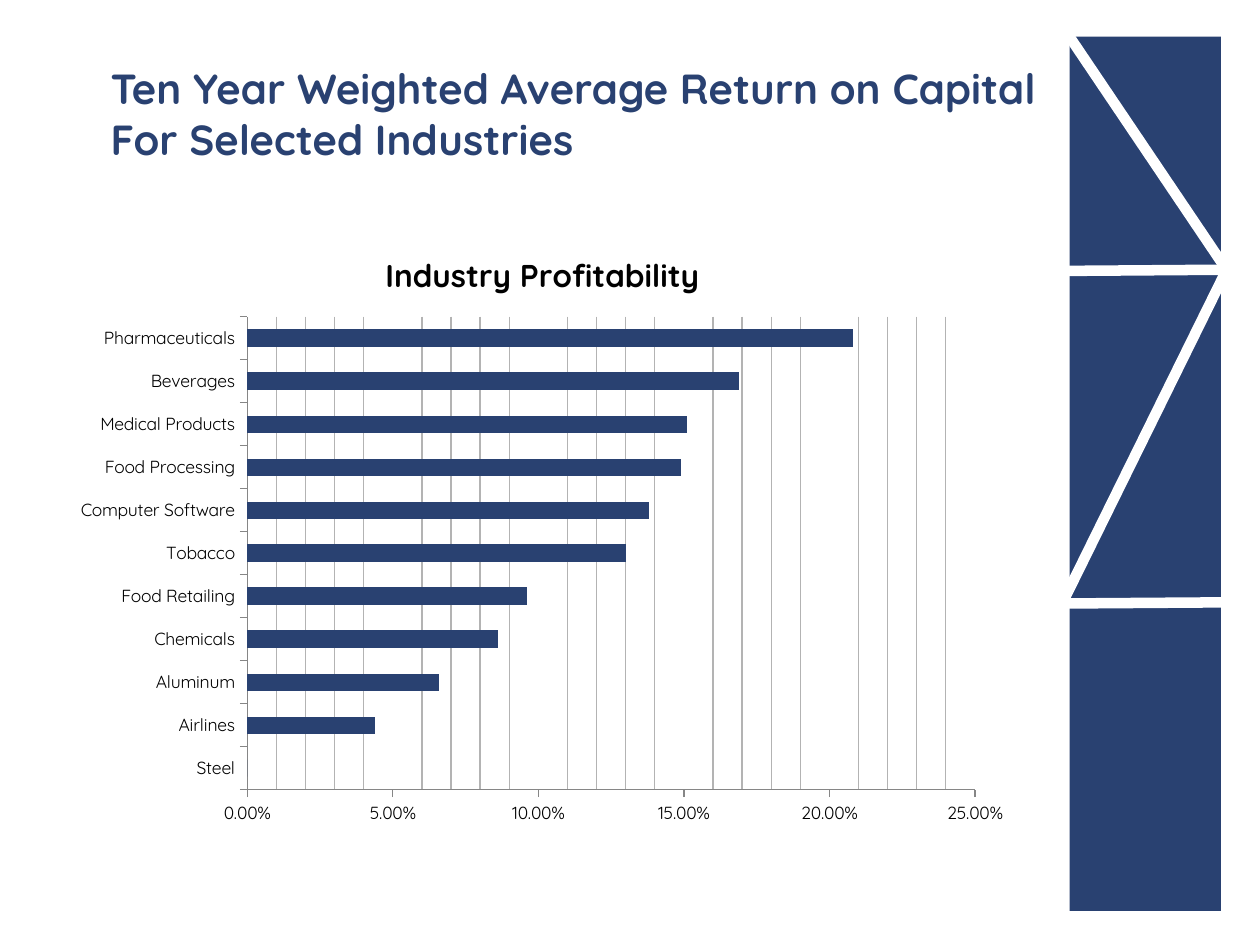
from dataclasses import dataclass

from lxml import etree
from pptx import Presentation
from pptx.chart.data import CategoryChartData
from pptx.dml.color import RGBColor
from pptx.enum.chart import XL_CHART_TYPE as ChartType, XL_TICK_MARK as Tick
from pptx.enum.shapes import MSO_CONNECTOR as Connector, MSO_SHAPE as Shape
from pptx.enum.text import MSO_AUTO_SIZE as AutoSize
from pptx.oxml.ns import qn
from pptx.util import Inches, Pt


@dataclass(frozen=True)
class Theme:
    font: str = "Quicksand"
    navy: RGBColor = RGBColor(0x29, 0x41, 0x71)
    white: RGBColor = RGBColor(0xFF, 0xFF, 0xFF)
    black: RGBColor = RGBColor(0, 0, 0)
    axis: RGBColor = RGBColor(0x86, 0x86, 0x86)
    grid: RGBColor = RGBColor(0xB3, 0xB3, 0xB3)
    heading: Pt = Pt(24)
    chart_title: Pt = Pt(18)
    label: Pt = Pt(10)
    stripe: Pt = Pt(6)
    hairline: Pt = Pt(0.75)


THEME = Theme()

RETURNS = {
    "Steel": 0, "Airlines": 0.044, "Aluminum": 0.066, "Chemicals": 0.086,
    "Food Retailing": 0.096, "Tobacco": 0.13, "Computer Software": 0.138,
    "Food Processing": 0.149, "Medical Products": 0.151,
    "Beverages": 0.169, "Pharmaceuticals": 0.208,
}

# Start and end of each white stripe across the side panel
STRIPES = [
    ((8.42, 4.79), (9.79, 4.78)),
    ((8.43, 4.79), (9.8, 2.01)),
    ((8.42, 0.19), (9.97, 2.49)),
    ((8.46, 2.15), (9.83, 2.14)),
]


def style_font(font, size, color, bold=False):
    font.name = THEME.font
    font.size = size
    font.bold = bold
    font.color.rgb = color


def add_panel(slide, x, y, w, h):
    sp = slide.shapes.add_shape(Shape.RECTANGLE, Inches(x), Inches(y), Inches(w), Inches(h))
    sp.shadow.inherit = False
    sp.fill.solid()
    sp.fill.fore_color.rgb = THEME.navy
    sp.line.fill.background()


def add_stripe(slide, start, end):
    points = [Inches(v) for v in (*start, *end)]
    line = slide.shapes.add_connector(Connector.STRAIGHT, *points)
    line.line.color.rgb = THEME.white
    line.line.width = THEME.stripe
    etree.SubElement(line._element.spPr, qn("a:effectLst"))


def add_heading(slide, text, x, y, w, h):
    box = slide.shapes.add_textbox(Inches(x), Inches(y), Inches(w), Inches(h))
    tf = box.text_frame
    tf.word_wrap = True
    tf.auto_size = AutoSize.SHAPE_TO_FIT_TEXT
    r = tf.paragraphs[0].add_run()
    r.text = text
    style_font(r.font, THEME.heading, THEME.navy, bold=True)


def set_plot_layout(chart, **fractions):
    """Fix the inner plot area, given as fractions of the chart frame."""
    plot_area = chart._chartSpace.chart.plotArea
    for old in plot_area.findall(qn("c:layout")):
        plot_area.remove(old)
    layout = etree.Element(qn("c:layout"))
    plot_area.insert(0, layout)
    manual = etree.SubElement(layout, qn("c:manualLayout"))
    settings = {"layoutTarget": "inner", "xMode": "edge", "yMode": "edge", **fractions}
    for name, value in settings.items():
        etree.SubElement(manual, qn(f"c:{name}")).set("val", str(value))


def style_minor_gridlines(axis):
    axis.has_minor_gridlines = True
    node = axis._element.find(qn("c:minorGridlines"))
    for tag in ("c:spPr", "a:ln", "a:solidFill", "a:srgbClr"):
        node = etree.SubElement(node, qn(tag))
        if tag == "a:ln":
            node.set("w", str(int(THEME.hairline)))
    node.set("val", str(THEME.grid))


def add_bar_chart(slide, title, values, x, y, w, h):
    data = CategoryChartData(number_format="0.00%")
    data.categories = list(values)
    data.add_series("Series 1", list(values.values()))
    chart = slide.shapes.add_chart(
        ChartType.BAR_CLUSTERED, Inches(x), Inches(y), Inches(w), Inches(h), data).chart
    style_font(chart.font, THEME.label, THEME.black)
    chart.has_legend = False

    # Title
    chart.has_title = True
    r = chart.chart_title.text_frame.paragraphs[0].add_run()
    r.text = title
    style_font(r.font, THEME.chart_title, THEME.black, bold=True)
    chart.chart_title.include_in_layout = False

    # Bars
    plot = chart.plots[0]
    plot.gap_width = 150
    plot.vary_by_categories = False
    fill = plot.series[0].format.fill
    fill.solid()
    fill.fore_color.rgb = THEME.navy

    # Axes
    for axis in (chart.category_axis, chart.value_axis):
        axis.has_major_gridlines = False
        axis.major_tick_mark = Tick.OUTSIDE
        axis.minor_tick_mark = Tick.NONE
        axis.format.line.color.rgb = THEME.axis
        axis.format.line.width = THEME.hairline
    scale = chart.value_axis
    scale.minimum_scale, scale.maximum_scale = 0, 0.25
    scale.major_unit, scale.minor_unit = 0.05, 0.01
    scale.tick_labels.number_format = "0.00%"
    scale.tick_labels.number_format_is_linked = False
    style_minor_gridlines(scale)
    set_plot_layout(chart, x=0.193, y=0.146, w=0.757, h=0.779)


def main():
    prs = Presentation()
    prs.slide_width, prs.slide_height = Inches(10), Inches(7.5)
    slide = prs.slides.add_slide(prs.slide_layouts[6])

    # Side panel
    add_panel(slide, 8.49, 0.29, 1.2, 6.94)

    # Chart and heading
    add_bar_chart(slide, "Industry Profitability", RETURNS, 0.49, 1.81, 7.63, 4.82)
    add_heading(slide, "Ten Year Weighted Average Return on Capital For Selected Industries",
                0.78, 0.45, 7.82, 0.91)

    # Stripes that cut the panel
    for start, end in STRIPES:
        add_stripe(slide, start, end)

    prs.save("out.pptx")


if __name__ == "__main__":
    main()
